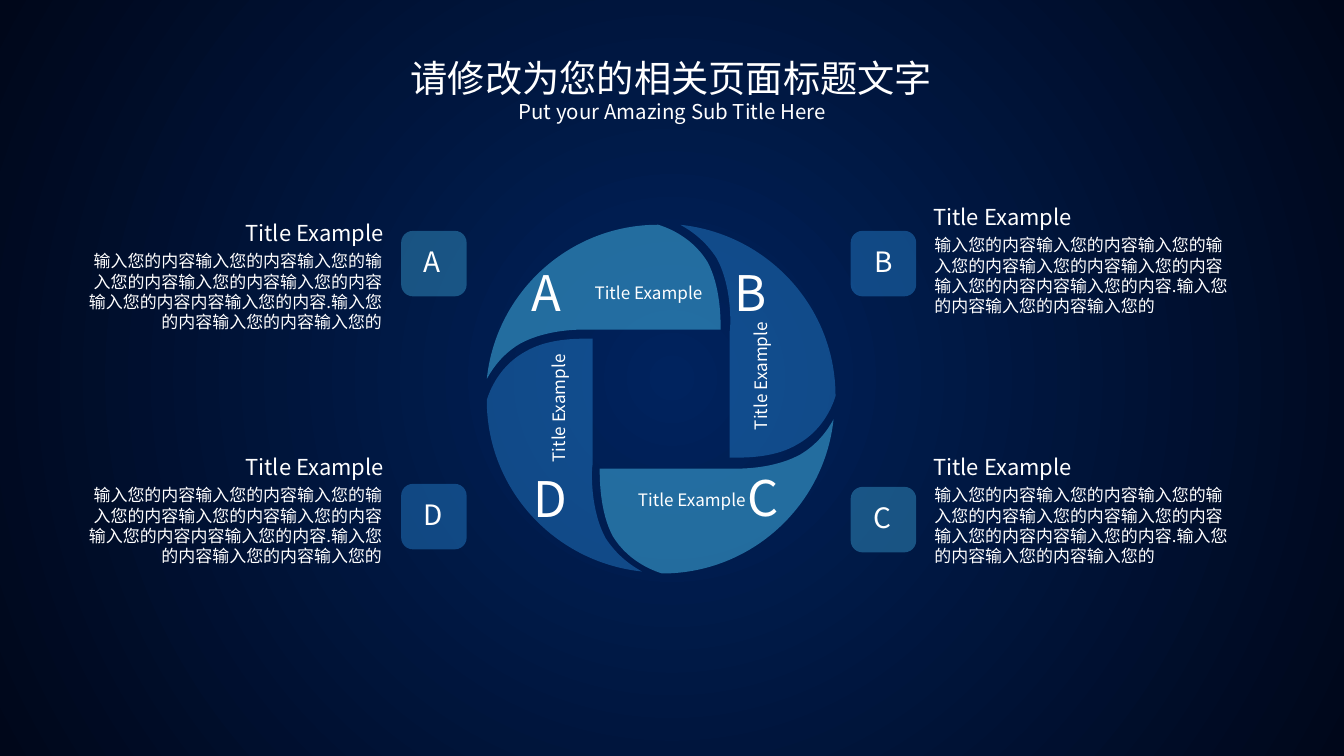
import pptx
import pptx.dml.color
import pptx.enum.shapes
import pptx.enum.text
import pptx.oxml
import pptx.oxml.ns
import pptx.util

RGBColor = pptx.dml.color.RGBColor
Align = pptx.enum.text.PP_ALIGN
Anchor = pptx.enum.text.MSO_ANCHOR
qn = pptx.oxml.ns.qn
DRAWING = pptx.oxml.ns.nsdecls("a")

WHITE = RGBColor(0xFF, 0xFF, 0xFF)
TEAL = RGBColor(0x32, 0x8F, 0xC1)
BLUE = RGBColor(0x23, 0x78, 0xC2)
NAVY = RGBColor(0x00, 0x23, 0x5E)
NIGHT = RGBColor(0x00, 0x07, 0x1A)

FONT = "Noto Sans CJK SC"
LABEL = "Title Example"
BODY = ("输入您的内容输入您的内容输入您的输入您的内容输入您的内容输入您的内容"
        "输入您的内容内容输入您的内容.输入您的内容输入您的内容输入您的")

# Blade outlines in inches: one point is a line, three points a Bezier curve
TOP_BLADE = [
    [(5.16, 3.41)], [(5.38, 3.29), (5.65, 3.27), (5.8, 3.27)],
    [(5.85, 3.27), (5.89, 3.27), (5.89, 3.27)], [(7.15, 3.27)],
    [(7.15, 3.17), (7.15, 2.84), (7.02, 2.6)], [(6.85, 2.32), (6.56, 2.24), (6.53, 2.23)],
    [(5.65, 2.23), (4.92, 2.9), (4.83, 3.76)], [(4.89, 3.65), (4.99, 3.51), (5.16, 3.41)]]
RIGHT_BLADE = [
    [(7.24, 4.54)], [(7.26, 4.54), (7.28, 4.54), (7.31, 4.54)],
    [(7.45, 4.54), (7.71, 4.53), (7.91, 4.41)], [(8.2, 4.25), (8.28, 3.96), (8.29, 3.93)],
    [(8.29, 3.04), (7.61, 2.32), (6.75, 2.23)], [(6.86, 2.29), (7, 2.39), (7.11, 2.56)],
    [(7.27, 2.85), (7.25, 3.26), (7.24, 3.29)]]

# Blade: outline, centre of a half turn, colour, opacity, letter, its place,
# label place, label rotation
BLADES = [
    (TOP_BLADE, None, TEAL, 70, "A", (5.27, 2.6), (5.58, 2.8), 0),
    (TOP_BLADE, (6.55, 3.96), TEAL, 70, "C", (7.42, 4.64), (6.01, 4.86), 0),
    (RIGHT_BLADE, None, BLUE, 50, "B", (7.29, 2.6), (6.85, 3.79), 270),
    (RIGHT_BLADE, (6.56, 3.95), BLUE, 50, "D", (5.29, 4.65), (4.85, 4.11), 270)]

# Entry: letter, its left and width, colour, badge place, heading place, body left, alignment
ENTRIES = [
    ("A", 4.14, 0.31, TEAL, (3.98, 2.29), (0.78, 2.18), 0.78, Align.RIGHT),
    ("B", 8.62, 0.29, BLUE, (8.44, 2.29), (9.26, 2.02), 9.27, Align.LEFT),
    ("C", 8.61, 0.3, TEAL, (8.44, 4.83), (9.26, 4.5), 9.27, Align.LEFT),
    ("D", 4.14, 0.33, BLUE, (3.98, 4.8), (0.78, 4.5), 0.78, Align.RIGHT)]


def inches(value):
    return pptx.util.Cm(value * 2.54)


def place_point(point, centre):
    """Give a point in slide units, after a half turn if there is a centre."""
    if centre:
        point = [2 * middle - value for middle, value in zip(centre, point)]
    return tuple(map(inches, point))


class Page:
    def __init__(self, deck):
        self.slide = deck.slides.add_slide(deck.slide_layouts[6])
        self.shapes = self.slide.shapes

    def background(self, inner, outer):
        fill = self.slide.background.fill
        fill.gradient()
        for stop, color, position in zip(fill.gradient_stops, (inner, outer), (0, 1)):
            stop.color.rgb = color
            stop.position = position
        gradient = self.slide.background._cSld.find(".//" + qn("a:gradFill"))
        gradient.remove(gradient.find(qn("a:lin")))
        gradient.append(pptx.oxml.parse_xml(
            f'<a:path {DRAWING} path="circle">'
            '<a:fillToRect l="50000" t="50000" r="50000" b="50000"/></a:path>'))

    def paint(self, shape, color, opacity):
        shape.shadow.inherit = False
        shape.line.fill.background()
        shape.fill.solid()
        shape.fill.fore_color.rgb = color
        tint = shape.fill._xPr.find(".//" + qn("a:srgbClr"))
        tint.append(pptx.oxml.parse_xml(f'<a:alpha {DRAWING} val="{opacity * 1000}"/>'))

    def text(self, words, place, size, points, align=Align.LEFT, rotation=0,
             inset=0, wrap=True, anchor=Anchor.TOP):
        box = self.shapes.add_textbox(*map(inches, place + size))
        box.rotation = rotation
        frame = box.text_frame
        margin = inches(inset)
        frame_format = {
            "margin_left": margin, "margin_right": margin, "margin_top": margin,
            "margin_bottom": margin, "word_wrap": wrap, "vertical_anchor": anchor,
            "auto_size": pptx.enum.text.MSO_AUTO_SIZE.SHAPE_TO_FIT_TEXT}
        for name, value in frame_format.items():
            setattr(frame, name, value)
        para = frame.paragraphs[0]
        para.alignment = align
        span = para.add_run()
        span.text = words
        for name, value in {"name": FONT, "size": pptx.util.Pt(points)}.items():
            setattr(span.font, name, value)
        span.font.color.rgb = WHITE
        span.font._rPr.append(pptx.oxml.parse_xml(f'<a:ea {DRAWING} typeface="{FONT}"/>'))

    def blade(self, outline, centre, color, opacity):
        segments = [[place_point(point, centre) for point in segment] for segment in outline]
        builder = self.shapes.build_freeform(*segments[0][0])
        builder.add_line_segments([segment[-1] for segment in segments[1:]], close=True)
        shape = builder.convert_to_shape()
        # Bend the lines that stand for curves
        lines = list(shape._element.iter(qn("a:lnTo")))
        for line, segment in zip(lines, segments[1:]):
            if len(segment) == 3:
                points = "".join(f'<a:pt x="{x - shape.left}" y="{y - shape.top}"/>'
                                 for x, y in segment)
                line.getparent().replace(line, pptx.oxml.parse_xml(
                    f'<a:cubicBezTo {DRAWING}>{points}</a:cubicBezTo>'))
        self.paint(shape, color, opacity)

    def badge(self, letter, letter_left, letter_width, color, place):
        square = self.shapes.add_shape(pptx.enum.shapes.MSO_SHAPE.ROUNDED_RECTANGLE,
                                       *map(inches, place + (0.65, 0.65)))
        square.adjustments[0] = 0.18
        self.paint(square, color, 50)
        self.text(letter, (letter_left, place[1] + 0.08), (letter_width, 0.45), 20,
                  inset=0.06, wrap=False, anchor=Anchor.MIDDLE)


def main():
    deck = pptx.Presentation()
    deck.slide_width = pptx.util.Cm(33.87)
    deck.slide_height = pptx.util.Cm(19.05)
    page = Page(deck)
    page.background(NAVY, NIGHT)

    # Headings
    page.text("请修改为您的相关页面标题文字", (2.73, 0.55), (7.87, 0.45), 26.6, Align.CENTER)
    page.text("Put your Amazing Sub Title Here", (3.87, 0.98), (5.6, 0.25), 14.6, Align.CENTER)

    # Wheel of four blades
    for outline, centre, color, opacity, letter, letter_place, label_place, rotation in BLADES:
        page.blade(outline, centre, color, opacity)
        page.text(letter, letter_place, (0.54, 0.59), 35)
        page.text(LABEL, label_place, (1.39, 0.2), 12.2, Align.RIGHT, rotation)

    # Lettered entries on both sides
    for letter, letter_left, letter_width, color, badge_place, heading, body_left, align in ENTRIES:
        page.badge(letter, letter_left, letter_width, color, badge_place)
        page.text(LABEL, heading, (3.03, 0.26), 15.7, align)
        page.text(BODY, (body_left, heading[1] + 0.31), (3.01, 0.82), 12.1, align)

    deck.save("out.pptx")


if __name__ == "__main__":
    main()
